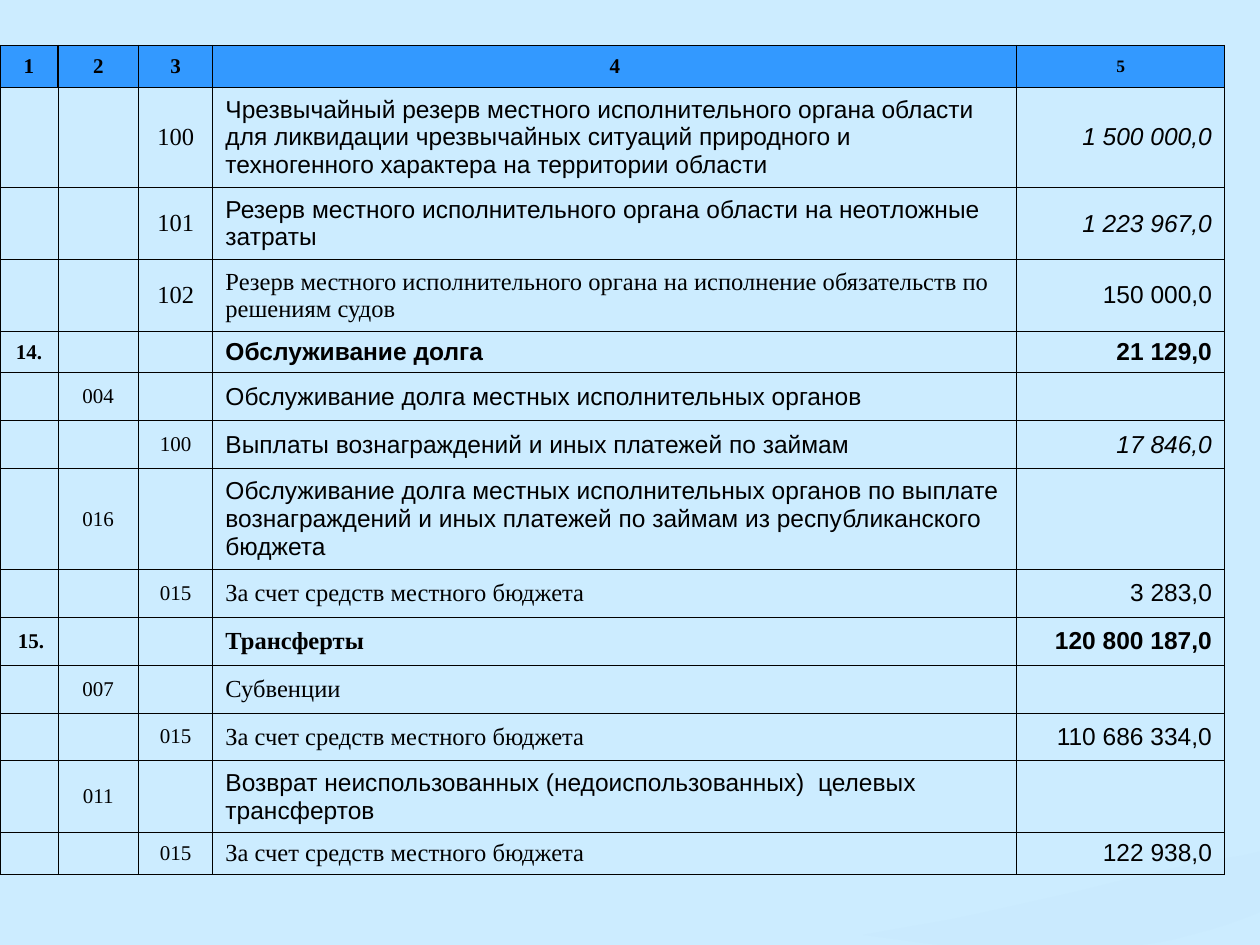
from dataclasses import dataclass

from lxml.etree import SubElement
from pptx import Presentation
from pptx.dml.color import RGBColor as RGB
from pptx.enum.text import MSO_ANCHOR as Anchor, PP_ALIGN as Align
from pptx.oxml.ns import qn
from pptx.util import Inches, Pt

WIDTH, HEIGHT = 10, 7.5
COLORS = {"page": "CCECFF", "wave": "C6E7FC", "header": "3399FF", "ink": "000000"}
SERIF, SANS = "Times New Roman", "Arial"

# Column widths as shares of the slide width, row heights in inches
COLUMNS = [0.046, 0.064, 0.059, 0.638, 0.165]
SINGLE, ROOMY, DOUBLE, TRIPLE = 0.33, 0.38, 0.57, 0.8
TABLE_TOP = 0.36
WAVE_OPACITY = 30

# Wave outline in hundredths of an inch
WAVE = [(1000, 676), (999, 676), (986, 679), (973, 681), (945, 686), (915, 693),
        (885, 700), (857, 707), (777, 725), (753, 730), (707, 738), (685, 742),
        (715, 746), (729, 748), (756, 751), (781, 753), (793, 754), (805, 754),
        (827, 755), (838, 755), (859, 754), (868, 754), (887, 752), (896, 751),
        (913, 749), (930, 746), (945, 742), (960, 738), (973, 734), (987, 729),
        (1000, 724)]


@dataclass
class BudgetRow:
    height: float
    section: str = ""
    program: str = ""
    item: str = ""
    name: str = ""
    amount: str = ""
    font: str = SANS
    code_size: int = 12
    bold: bool = False
    italic: bool = False


LOCAL_FUNDS = "За счет средств местного бюджета"
ROWS = [
    BudgetRow(TRIPLE, item="100", amount="1 500 000,0", code_size=14, italic=True,
              name="Чрезвычайный резерв местного исполнительного органа области для "
                   "ликвидации чрезвычайных ситуаций природного и техногенного "
                   "характера на территории области"),
    BudgetRow(DOUBLE, item="101", amount="1 223 967,0", code_size=14, italic=True,
              name="Резерв местного исполнительного органа области на неотложные затраты"),
    BudgetRow(DOUBLE, item="102", amount="150 000,0", code_size=14, font=SERIF,
              name="Резерв местного исполнительного органа на исполнение обязательств "
                   "по решениям судов"),
    BudgetRow(SINGLE, section="14.", name="Обслуживание долга", amount="21 129,0", bold=True),
    BudgetRow(ROOMY, program="004", name="Обслуживание долга местных исполнительных органов"),
    BudgetRow(ROOMY, item="100", name="Выплаты вознаграждений и иных платежей по займам",
              amount="17 846,0", italic=True),
    BudgetRow(TRIPLE, program="016",
              name="Обслуживание долга местных исполнительных органов по выплате "
                   "вознаграждений и иных платежей по займам из республиканского бюджета"),
    BudgetRow(ROOMY, item="015", name=LOCAL_FUNDS, amount="3 283,0", font=SERIF),
    BudgetRow(ROOMY, section=" 15.", name="Трансферты", amount="120 800 187,0",
              font=SERIF, bold=True),
    BudgetRow(ROOMY, program="007", name="Субвенции", font=SERIF),
    BudgetRow(ROOMY, item="015", name=LOCAL_FUNDS, amount="110 686 334,0", font=SERIF),
    BudgetRow(DOUBLE, program="011",
              name="Возврат неиспользованных (недоиспользованных)  целевых трансфертов"),
    BudgetRow(SINGLE, item="015", name=LOCAL_FUNDS, amount="122 938,0", font=SERIF),
]


def color(name: str) -> RGB:
    return RGB.from_string(COLORS[name])


def set_borders(cell, left: float = 0.5, right: float = 0.5) -> None:
    tc_pr = cell._tc.get_or_add_tcPr()
    for side, width in (("L", left), ("R", right), ("T", 0.5), ("B", 0.5)):
        line = SubElement(tc_pr, qn(f"a:ln{side}"), w=str(Pt(width)))
        fill = SubElement(line, qn("a:solidFill"))
        SubElement(fill, qn("a:srgbClr"), val=COLORS["ink"])


def write(cell, text: str, *, size: int = 12, font: str = SERIF, bold: bool = False,
          italic: bool = False, align: Align = Align.CENTER) -> None:
    cell.vertical_anchor = Anchor.MIDDLE
    p = cell.text_frame.paragraphs[0]
    p.alignment = align
    if not text:
        SubElement(p._p, qn("a:endParaRPr"), sz=str(size * 100))
        return
    r = p.add_run()
    r.text = text
    r.font.size, r.font.name = Pt(size), font
    r.font.bold, r.font.italic = bold, italic
    r.font.color.rgb = color("ink")


def draw_wave(s) -> None:
    builder = s.shapes.build_freeform(*WAVE[0], scale=Inches(0.01))
    builder.add_line_segments(WAVE[1:], close=True)
    sp = builder.convert_to_shape()
    sp.shadow.inherit = False
    sp.line.fill.background()
    sp.fill.solid()
    sp.fill.fore_color.rgb = color("wave")
    rgb = sp._element.spPr.find(qn("a:solidFill")).find(qn("a:srgbClr"))
    SubElement(rgb, qn("a:alpha"), val=str(WAVE_OPACITY * 1000))


def draw_header(cells) -> None:
    for i, cell in enumerate(cells):
        # Heavier rules separate the three code columns
        set_borders(cell, left=1 if i in (1, 2) else 0.5, right=1 if i < 2 else 0.5)
        cell.fill.solid()
        cell.fill.fore_color.rgb = color("header")
        write(cell, str(i + 1), size=10 if i == 4 else 12, bold=True)


def draw_row(cells, row: BudgetRow) -> None:
    for cell in cells:
        set_borders(cell)
        cell.fill.background()
    section, program, item, name, amount = cells
    write(section, row.section, bold=True,
          align=Align.LEFT if row.section.startswith(" ") else Align.CENTER)
    write(program, row.program)
    write(item, row.item, size=row.code_size)
    write(name, row.name, size=14, font=row.font, bold=row.bold, align=Align.LEFT)
    write(amount, row.amount, size=14, font=SANS, bold=row.bold, italic=row.italic,
          align=Align.RIGHT)


def draw_table(s) -> None:
    heights = [SINGLE] + [row.height for row in ROWS]
    frame = s.shapes.add_table(len(heights), len(COLUMNS), 0, Inches(TABLE_TOP),
                               Inches(sum(COLUMNS) * WIDTH), Inches(sum(heights)))
    table = frame.table
    table.first_row = table.horz_banding = False
    for column, share in zip(table.columns, COLUMNS):
        column.width = Inches(share * WIDTH)
    for table_row, height in zip(table.rows, heights):
        table_row.height = Inches(height)
    header, *body = [list(table_row.cells) for table_row in table.rows]
    draw_header(header)
    for cells, row in zip(body, ROWS):
        draw_row(cells, row)


def main() -> None:
    prs = Presentation()
    prs.slide_width, prs.slide_height = Inches(WIDTH), Inches(HEIGHT)
    s = prs.slides.add_slide(prs.slide_layouts[6])
    s.background.fill.solid()
    s.background.fill.fore_color.rgb = color("page")
    draw_wave(s)
    draw_table(s)
    prs.save("out.pptx")


if __name__ == "__main__":
    main()
